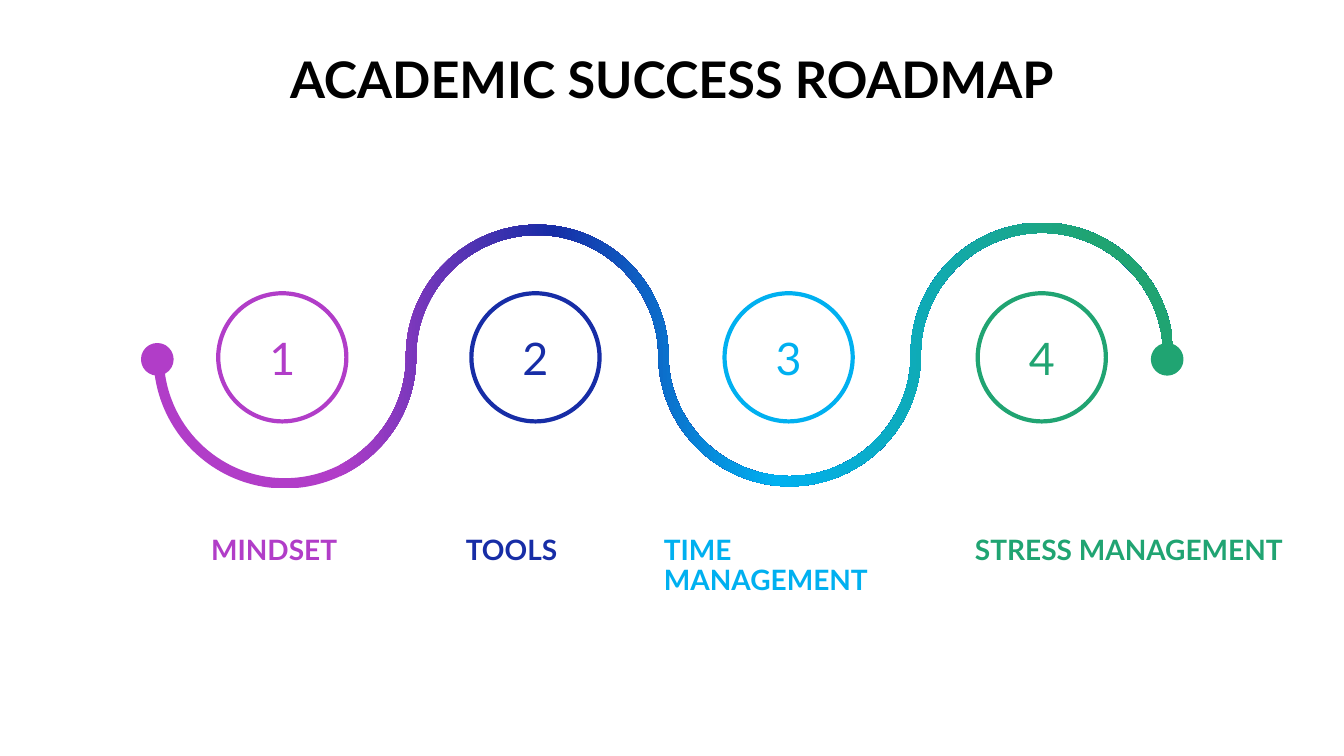
from dataclasses import dataclass

from lxml import etree
from pptx import Presentation, util as u
from pptx.dml.color import RGBColor
from pptx.enum import shapes, text


@dataclass(frozen=True)
class Theme:
    """Colours, font and type sizes of the slide."""
    hues: tuple = ("B13DC8", "172DA6", "00B0F0", "20A472")
    stops: tuple = (18, 39, 61, 92)
    ink: str = "000000"
    paper: str = "FFFFFF"
    font: str = "Lato"
    title: int = 36
    digit: int = 32
    label: int = 20


THEME = Theme()
STEPS = (
    ("MINDSET", 5.07, 4.98),
    ("TOOLS", 11.49, 4.98),
    ("TIME MANAGEMENT", 16.48, 6.93),
    ("STRESS MANAGEMENT", 24.32, 8.28),
)
TIGHT = {"line_spacing": 0.9, "space_before": u.Pt(10)}
BEND = 0.55
ARC = ((-1, 0), (-1, BEND), (-BEND, 1), (0, 1), (BEND, 1), (1, BEND), (1, 0))
SPACE = "{http://schemas.openxmlformats.org/drawingml/2006/main}"


def assign(item, values):
    """Set each named value on the item."""
    for name, value in values.items():
        setattr(item, name, value)


def write(shape, words, size, hue, bold=False, frame=None, para=None):
    """Put one styled paragraph into a shape."""
    body = shape.text_frame
    assign(body, {"word_wrap": True, "auto_size": text.MSO_AUTO_SIZE.NONE,
                  "vertical_anchor": text.MSO_ANCHOR.TOP, **(frame or {})})
    line = body.paragraphs[0]
    assign(line, para or {})
    run = line.add_run()
    run.text = words
    assign(run.font, {"name": THEME.font, "size": u.Pt(size), "bold": bold})
    run.font.color.rgb = RGBColor.from_string(hue)


def disc(slide, x, y, size, fill, edge, width):
    """Draw a filled and outlined circle in a square box."""
    shape = slide.shapes.add_shape(
        shapes.MSO_SHAPE.OVAL, u.Cm(x), u.Cm(y), u.Cm(size), u.Cm(size))
    shape.shadow.inherit = False
    shape.fill.solid()
    shape.fill.fore_color.rgb = RGBColor.from_string(fill)
    shape.line.color.rgb = RGBColor.from_string(edge)
    shape.line.width = u.Pt(width)
    return shape


def heading(slide, x, y, w, h):
    """Place the title in its box."""
    title = slide.shapes.title
    assign(title, {"left": u.Cm(x), "top": u.Cm(y),
                   "width": u.Cm(w), "height": u.Cm(h)})
    write(title, "ACADEMIC SUCCESS ROADMAP", THEME.title, THEME.ink, True,
          para={"alignment": text.PP_ALIGN.CENTER, **TIGHT})


def badges(slide, x, y, size, pitch):
    """Draw the row of numbered rings."""
    for i, hue in enumerate(THEME.hues):
        ring = disc(slide, x + i * pitch, y, size, THEME.paper, hue, 3)
        write(ring, str(i + 1), THEME.digit, hue,
              frame={"vertical_anchor": text.MSO_ANCHOR.MIDDLE},
              para={"alignment": text.PP_ALIGN.CENTER})


def edge(x, y, w, h, half, side):
    """List the curve points of one edge of the winding road."""
    count = len(STEPS)
    mid = (w - 2 * half) / (2 * count)
    drop = (h - 2 * (mid + half)) / (count - 1)
    points = []
    for i in range(count):
        turn = 1 if i % 2 == 0 else -1
        reach = mid + side * turn * half
        centre = x + half + mid * (2 * i + 1)
        level = y + h - half - mid - i * drop
        points += [(u.Cm(centre + reach * across),
                    u.Cm(level + turn * reach * down)) for across, down in ARC]
    return points


def bend(shape):
    """Turn each arc's run of line segments into two smooth curves."""
    route = shape.element.find(f".//{SPACE}path")
    nodes = list(route)[:-1]
    for start in range(0, len(nodes), len(ARC)):
        for first in (start + 1, start + 4):
            curve = etree.Element(f"{SPACE}cubicBezTo")
            nodes[first].addprevious(curve)
            for node in nodes[first:first + 3]:
                curve.append(node[0])
                route.remove(node)


def road(slide, x, y, w, h, half=0.13):
    """Draw the winding road with its colour blend."""
    box = (x, y, w, h, half)
    points = edge(*box, 1) + edge(*box, -1)[::-1]
    pen = slide.shapes.build_freeform(*points[0])
    pen.add_line_segments(points[1:], close=True)
    shape = pen.convert_to_shape()
    bend(shape)
    shape.shadow.inherit = False
    shape.line.fill.background()
    shape.fill.gradient()
    shape.fill.gradient_angle = 0
    blend = shape.element.find(f".//{SPACE}gsLst")
    blend[:] = []
    for hue, stop in zip(THEME.hues, THEME.stops):
        node = etree.SubElement(blend, f"{SPACE}gs", pos=str(stop * 1000))
        etree.SubElement(node, f"{SPACE}srgbClr", val=hue)


def ends(slide, x, y, w, size):
    """Mark both ends of the road with dots."""
    for left, hue in ((x, THEME.hues[0]), (x + w - size, THEME.hues[-1])):
        disc(slide, left, y, size, hue, hue, 6)


def labels(slide, y, h):
    """Write the step names below the road."""
    for (words, x, w), hue in zip(STEPS, THEME.hues):
        box = slide.shapes.add_textbox(u.Cm(x), u.Cm(y), u.Cm(w), u.Cm(h))
        write(box, words, THEME.label, hue, True, para=TIGHT)


def main():
    """Build and save the slide."""
    deck = Presentation()
    assign(deck, {"slide_width": u.Cm(33.87), "slide_height": u.Cm(19.05)})
    slide = deck.slides.add_slide(deck.slide_layouts[5])
    badges(slide, 5.5, 7.39, 3.23, 6.38)
    road(slide, 3.87, 5.61, 25.7, 6.7)
    ends(slide, 3.66, 8.75, 26.06, 0.61)
    labels(slide, 13.39, 0.84)
    heading(slide, 0.64, 1.27, 32.59, 1.75)
    deck.save("out.pptx")


if __name__ == "__main__":
    main()
